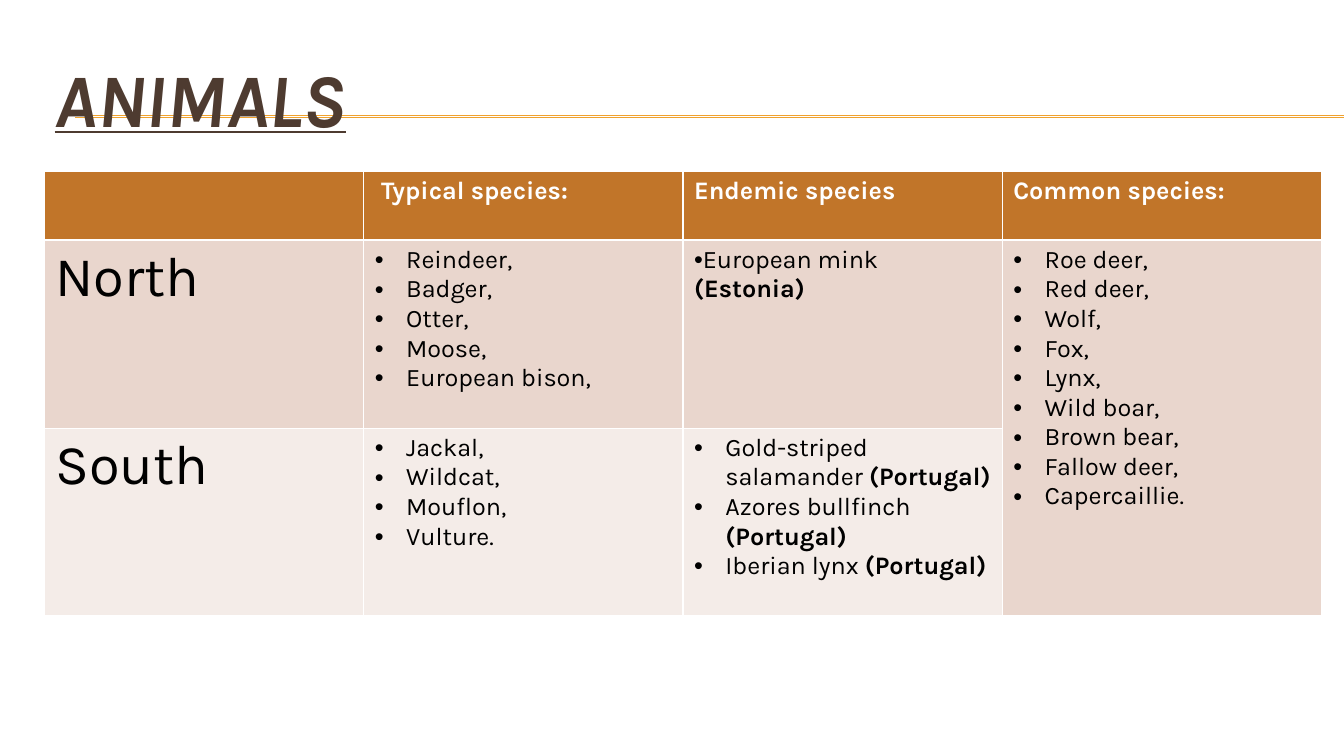
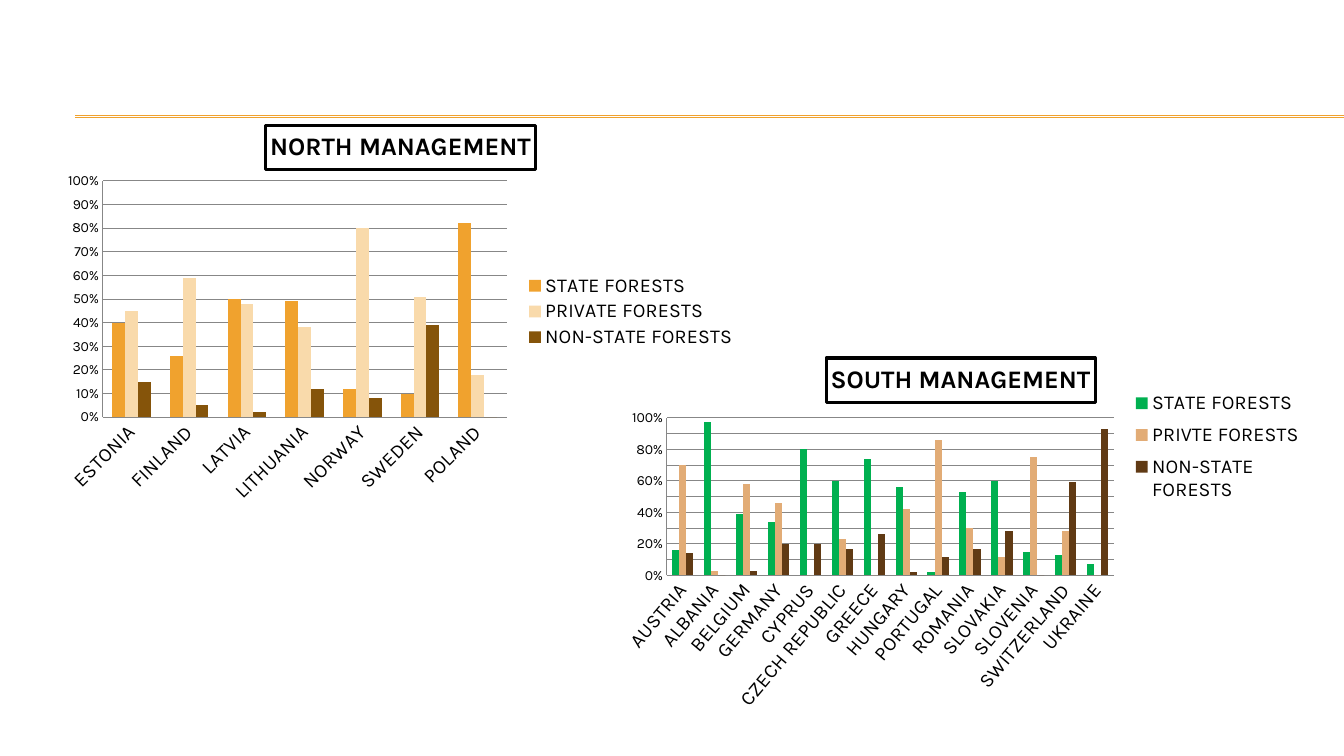
from lxml import etree
from pptx import Presentation
from pptx.chart.data import CategoryChartData
from pptx.dml.color import RGBColor
from pptx.enum.chart import XL_CHART_TYPE, XL_LEGEND_POSITION, XL_TICK_MARK
from pptx.enum.shapes import MSO_CONNECTOR
from pptx.enum.text import MSO_ANCHOR, PP_ALIGN
from pptx.oxml.ns import qn
from pptx.util import Cm, Pt

FONT = "Karla"
GOLD, BROWN, BLACK, WHITE, GRID = "F0A22E", "4E3B30", "000000", "FFFFFF", "878787"


def rgb(value):
    return RGBColor.from_string(value)


def place(element, previous_tag, **fractions):
    """Give a chart part a fixed place, in fractions of the chart."""
    for old in element.findall(qn("c:layout")):
        element.remove(old)
    layout = etree.Element(qn("c:layout"))
    manual = etree.SubElement(layout, qn("c:manualLayout"))
    if previous_tag is None:
        etree.SubElement(manual, qn("c:layoutTarget")).set("val", "inner")
        element.insert(0, layout)
    else:
        element.find(qn(previous_tag)).addnext(layout)
    for mode in ("xMode", "yMode"):
        etree.SubElement(manual, qn(f"c:{mode}")).set("val", "edge")
    for key, value in fractions.items():
        etree.SubElement(manual, qn(f"c:{key}")).set("val", str(value))


prs = Presentation()
prs.slide_width, prs.slide_height = Cm(33.87), Cm(19.05)
animals = prs.slides.add_slide(prs.slide_layouts[5])
management = prs.slides.add_slide(prs.slide_layouts[6])

# Double gold rule, shared through the slide master
for height in (2.92, 2.95):
    rule = animals.shapes.add_connector(
        MSO_CONNECTOR.STRAIGHT, Cm(1.9), Cm(height), prs.slide_width, Cm(height))
    rule.line.color.rgb = rgb(GOLD)
    rule.line.width = Pt(0.75)
    etree.SubElement(rule._element.spPr, qn("a:effectLst"))
    prs.slide_master.shapes._spTree.append(rule._element)

# Slide 1: title
heading = animals.shapes.title
heading.left, heading.top, heading.width, heading.height = Cm(1.12), Cm(1.27), Cm(32.18), Cm(2.34)
heading.text_frame.text = "ANIMALS"
heading.text_frame.vertical_anchor = MSO_ANCHOR.MIDDLE
heading.text_frame.paragraphs[0].alignment = PP_ALIGN.LEFT
heading_font = heading.text_frame.paragraphs[0].runs[0].font
heading_format = {"name": FONT, "size": Pt(54), "bold": True, "italic": True, "underline": True}
for attribute, value in heading_format.items():
    setattr(heading_font, attribute, value)
heading_font.color.rgb = rgb(BROWN)

# Slide 1: species by region
SPECIES = [
    [[], [" Typical species:"], ["Endemic species"], ["Common species:"]],
    [["North"],
     ["Reindeer,", "Badger,", "Otter,", "Moose,", "European bison,"],
     ["European mink (Estonia)"],
     ["Roe deer,", "Red deer,", "Wolf,", "Fox,", "Lynx,", "Wild boar,",
      "Brown bear,", "Fallow deer,", "Capercaillie."]],
    [["South"],
     ["Jackal,", "Wildcat,", "Mouflon,", "Vulture."],
     ["Gold-striped salamander (Portugal)", "Azores bullfinch (Portugal)",
      "Iberian lynx (Portugal)"],
     []],
]
ROW_FILLS = ["C17529", "E9D6CD", "F4ECE8"]
ROW_HEIGHTS = [1.73, 4.74, 4.72]
INDENT = Cm(0.79)

species = animals.shapes.add_table(
    3, 4, Cm(1.12), Cm(4.32), Cm(32.18), Cm(sum(ROW_HEIGHTS))).table
for r, row in enumerate(SPECIES):
    species.rows[r].height = Cm(ROW_HEIGHTS[r])
    for c, lines in enumerate(row):
        cell = species.cell(r, c)
        cell.margin_left = cell.margin_right = Cm(0.28)
        cell.fill.solid()
        cell.fill.fore_color.rgb = rgb(ROW_FILLS[r])
        for i, line in enumerate(lines):
            paragraph = cell.text_frame.paragraphs[0] if i == 0 else cell.text_frame.add_paragraph()
            if r > 0 and c > 0:
                properties = paragraph._p.get_or_add_pPr()
                hanging = 0 if line.startswith("European mink") else INDENT
                properties.set("marL", str(hanging))
                properties.set("indent", str(-hanging))
                etree.SubElement(properties, qn("a:buFont")).set("typeface", "Arial")
                etree.SubElement(properties, qn("a:buChar")).set("char", "•")
            # The country in brackets is bold
            name, bracket, country = line.partition("(")
            for text, bold in ((name, r == 0), (bracket + country, True)):
                if text:
                    run = paragraph.add_run()
                    run.text = text
                    run_format = {"name": FONT, "bold": bold,
                                  "size": Pt(40 if r > 0 and c == 0 else 18)}
                    for attribute, value in run_format.items():
                        setattr(run.font, attribute, value)
                    run.font.color.rgb = rgb(BLACK if r else WHITE)
species.cell(1, 3).merge(species.cell(2, 3))

# Slide 2: forest ownership, one chart per region
REGIONS = [
    {"title": "NORTH MANAGEMENT", "box": (1.37, 2.82, 17.4, 10.06), "turn": -45,
     "plot": {"x": 0.07, "y": 0.173, "w": 0.585, "h": 0.592},
     "legend": {"x": 0.68, "y": 0.4, "w": 0.31, "h": 0.2},
     "heading": {"x": 0.306, "y": 0.033},
     "countries": ["ESTONIA", "FINLAND", "LATVIA", "LITHUANIA", "NORWAY", "SWEDEN", "POLAND"],
     "owners": [
         ("STATE FORESTS", GOLD, [0.4, 0.26, 0.5, 0.49, 0.12, 0.1, 0.82]),
         ("PRIVATE FORESTS", "F9DAAB", [0.45, 0.59, 0.48, 0.38, 0.8, 0.51, 0.18]),
         ("NON-STATE FORESTS", "85540A", [0.15, 0.05, 0.02, 0.12, 0.08, 0.39, 0])]},
    {"title": "SOUTH MANAGEMENT", "box": (15.39, 8.71, 17.68, 9.42), "turn": -50,
     "plot": {"x": 0.08, "y": 0.193, "w": 0.637, "h": 0.422},
     "legend": {"x": 0.74, "y": 0.1, "w": 0.25, "h": 0.34},
     "heading": {"x": 0.307, "y": 0.033},
     "countries": ["AUSTRIA", "ALBANIA", "BELGIUM", "GERMANY", "CYPRUS", "CZECH REPUBLIC",
                   "GREECE", "HUNGARY", "PORTUGAL", "ROMANIA", "SLOVAKIA", "SLOVENIA",
                   "SWITZERLAND", "UKRAINE"],
     "owners": [
         ("STATE FORESTS", "00B050", [0.16, 0.97, 0.39, 0.34, 0.8, 0.6, 0.74, 0.56, 0.02,
                                      0.53, 0.6, 0.15, 0.13, 0.07]),
         ("PRIVTE FORESTS", "E2AC76", [0.7, 0.03, 0.58, 0.46, 0, 0.23, 0, 0.42, 0.86,
                                       0.3, 0.12, 0.75, 0.28, 0]),
         ("NON-STATE FORESTS", "603A14", [0.14, 0, 0.03, 0.2, 0.2, 0.17, 0.26, 0.02, 0.12,
                                          0.17, 0.28, 0, 0.59, 0.93])]},
]
for region in REGIONS:
    shares = CategoryChartData(number_format="0%")
    shares.categories = region["countries"]
    for owner, _, values in region["owners"]:
        shares.add_series(owner, values)
    chart = management.shapes.add_chart(
        XL_CHART_TYPE.COLUMN_CLUSTERED, *map(Cm, region["box"]), shares).chart
    chart.font.name = FONT
    chart.font.size = Pt(10)
    chart.font.color.rgb = rgb(BLACK)

    # Bars
    bars = chart.plots[0]
    bars.vary_by_categories = False
    bars.gap_width, bars.overlap = 150, 0
    for series, (_, color, _) in zip(bars.series, region["owners"]):
        series.format.fill.solid()
        series.format.fill.fore_color.rgb = rgb(color)
        series.invert_if_negative = False

    # Axes
    percent, country = chart.value_axis, chart.category_axis
    percent_format = {"minimum_scale": 0, "maximum_scale": 1, "major_unit": 0.1,
                      "has_major_gridlines": True}
    for attribute, value in percent_format.items():
        setattr(percent, attribute, value)
    percent.tick_labels.number_format = "0%"
    percent.tick_labels.number_format_is_linked = False
    for axis, size in ((percent, 10), (country, 14)):
        axis.major_tick_mark = axis.minor_tick_mark = XL_TICK_MARK.NONE
        axis.tick_labels.font.size = Pt(size)
    for outline in (percent.format.line, country.format.line, percent.major_gridlines.format.line):
        outline.color.rgb = rgb(GRID)
        outline.width = Pt(0.75)
    label_body = country._element.find(qn("c:txPr")).find(qn("a:bodyPr"))
    label_body.set("rot", str(region["turn"] * 60000))
    label_body.set("vert", "horz")

    # Framed title
    chart.has_title = True
    chart.chart_title.include_in_layout = False
    title_frame = chart.chart_title.text_frame
    title_frame.text = region["title"]
    title_font = title_frame.paragraphs[0].runs[0].font
    for attribute, value in {"name": FONT, "size": Pt(18), "bold": True}.items():
        setattr(title_font, attribute, value)
    title_font.color.rgb = rgb(BLACK)
    border = chart.chart_title.format.line
    border.color.rgb = rgb(BLACK)
    border.width = Pt(2.25)

    # Legend
    chart.has_legend = True
    chart.legend.position = XL_LEGEND_POSITION.RIGHT
    chart.legend.include_in_layout = False
    chart.legend.font.size = Pt(14)

    place(chart._chartSpace.chart.plotArea, None, **region["plot"])
    place(chart.legend._element, "c:legendPos", **region["legend"])
    place(chart.chart_title._element, "c:tx", **region["heading"])

prs.save("out.pptx")
